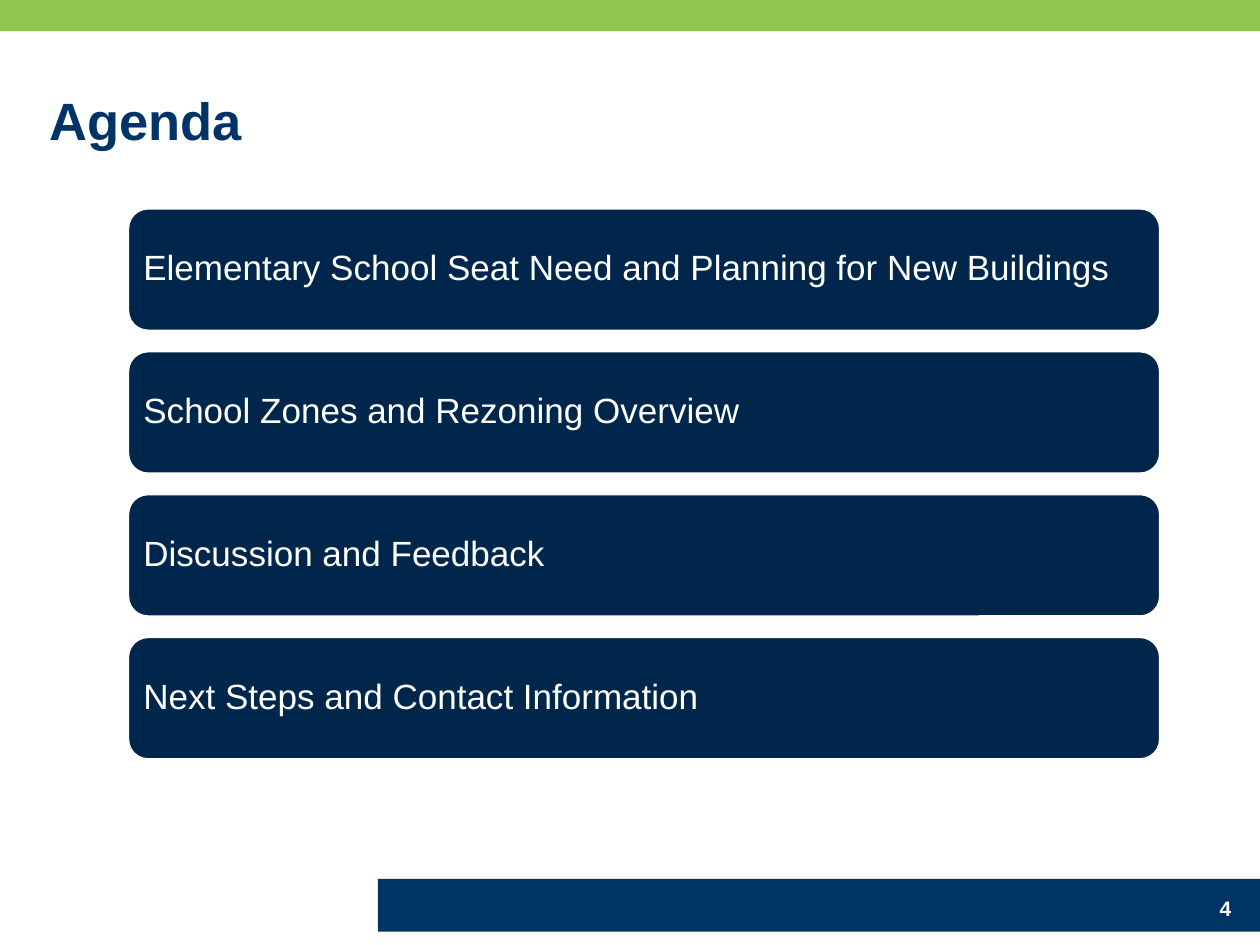
from pptx import Presentation
from pptx.dml.color import RGBColor
from pptx.enum.shapes import MSO_SHAPE as Shape
from pptx.enum.text import MSO_ANCHOR as Anchor, PP_ALIGN as Align
from pptx.util import Cm, Pt

NAVY = RGBColor(0x00, 0x33, 0x66)
DARK_NAVY = RGBColor(0x00, 0x26, 0x4C)
GREEN = RGBColor(0x92, 0xC6, 0x50)
WHITE = RGBColor(0xFF, 0xFF, 0xFF)

AGENDA = [
    "Elementary School Seat Need and Planning for New Buildings",
    "School Zones and Rezoning Overview",
    "Discussion and Feedback",
    "Next Steps and Contact Information",
]
FIRST_TOP, ITEM_PITCH = 4.19, 2.88


class AgendaSlide:
    font_name = "Arial"

    def __init__(self, slide):
        self.slide = slide

    def set_text(self, shape, text, size, color, bold=False, align=Align.LEFT):
        text_frame = shape.text_frame
        text_frame.text = text
        text_frame.word_wrap = True
        paragraph = text_frame.paragraphs[0]
        paragraph.alignment = align
        font = paragraph.runs[0].font
        font.name, font.size, font.bold = self.font_name, Pt(size), bold
        font.color.rgb = color
        return text_frame

    def title(self, text, left, top, width, height):
        title = self.slide.shapes.title
        title.left, title.top = Cm(left), Cm(top)
        title.width, title.height = Cm(width), Cm(height)
        text_frame = self.set_text(title, text, 30, NAVY, bold=True)
        text_frame.vertical_anchor = Anchor.BOTTOM

    def block(self, kind, color, left, top, width, height):
        shape = self.slide.shapes.add_shape(
            kind, Cm(left), Cm(top), Cm(width), Cm(height))
        shape.shadow.inherit = False
        shape.fill.solid()
        shape.fill.fore_color.rgb = color
        shape.line.fill.background()
        return shape

    def item(self, text, left, top, width, height):
        shape = self.block(Shape.ROUNDED_RECTANGLE, DARK_NAVY,
                           left, top, width, height)
        shape.line.color.rgb = WHITE
        shape.line.width = Pt(2)
        text_frame = self.set_text(shape, text, 20, WHITE)
        text_frame.vertical_anchor = Anchor.MIDDLE
        text_frame.margin_left = text_frame.margin_right = Cm(0.2)
        text_frame.margin_top = text_frame.margin_bottom = Cm(0.2)
        text_frame.paragraphs[0].line_spacing = 0.9

    def page_number(self, text, left, top, width, height):
        box = self.slide.shapes.add_textbox(
            Cm(left), Cm(top), Cm(width), Cm(height))
        self.set_text(box, text, 12, WHITE, bold=True, align=Align.RIGHT)


def main():
    presentation = Presentation()
    presentation.slide_width, presentation.slide_height = Cm(25.4), Cm(19.05)
    slide = presentation.slides.add_slide(presentation.slide_layouts[5])
    agenda = AgendaSlide(slide)

    # Header and footer bands
    agenda.block(Shape.RECTANGLE, NAVY, 7.62, 17.72, 17.78, 1.06)
    agenda.block(Shape.RECTANGLE, GREEN, 0, 0, 25.4, 0.63)

    # Title and page number
    agenda.title("Agenda", 0.74, 1.55, 21.59, 1.63)
    agenda.page_number("4", 22.33, 17.93, 2.74, 0.64)

    # Agenda items
    for index, text in enumerate(AGENDA):
        agenda.item(text, 2.57, FIRST_TOP + index * ITEM_PITCH, 20.83, 2.49)

    presentation.save("out.pptx")


if __name__ == "__main__":
    main()
